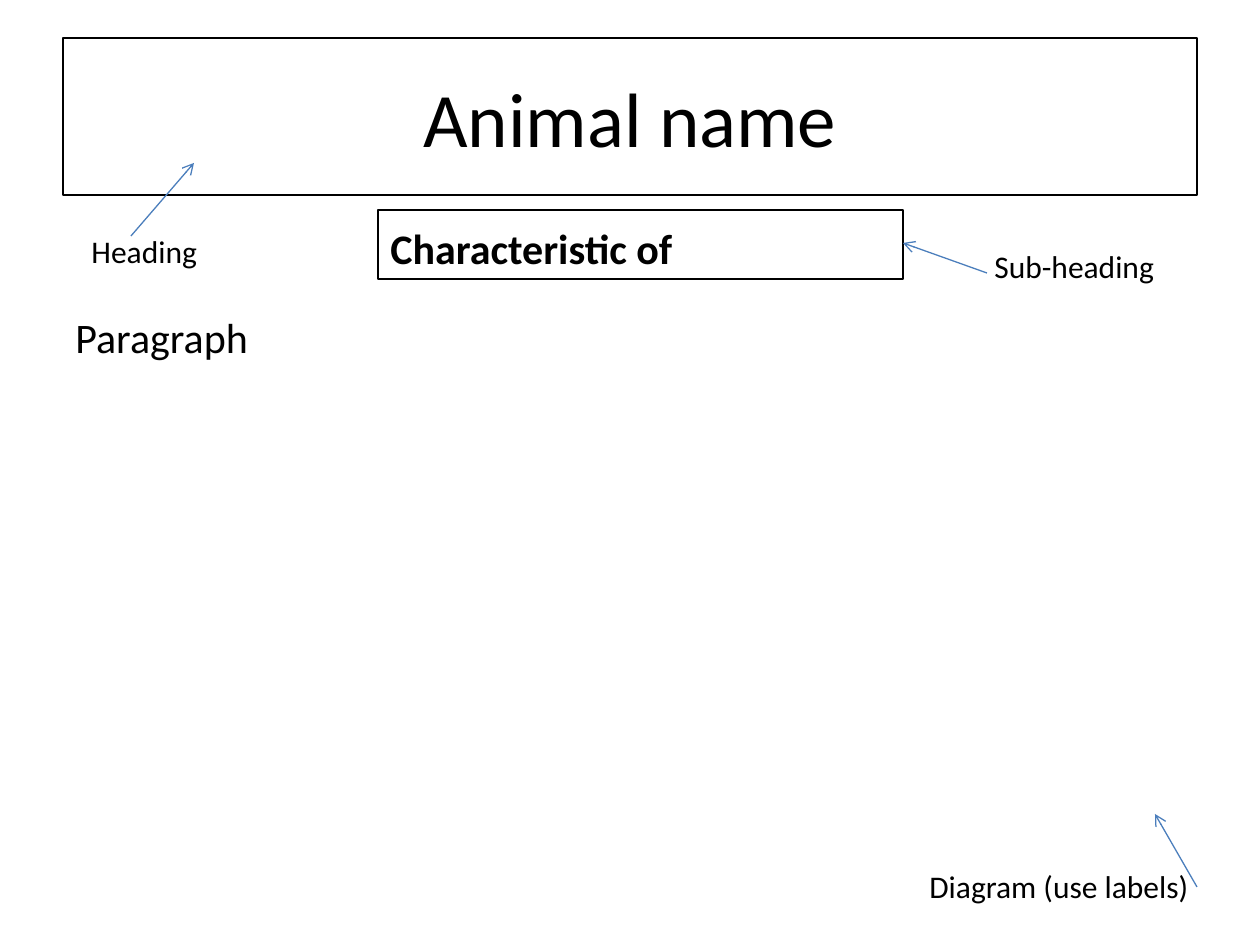
from lxml.etree import SubElement
from pptx import Presentation
from pptx.dml.color import RGBColor
from pptx.enum.shapes import MSO_CONNECTOR, MSO_SHAPE
from pptx.enum.text import MSO_ANCHOR as ANCHOR, MSO_AUTO_SIZE as FIT, PP_ALIGN as ALIGN
from pptx.oxml.ns import qn
from pptx.util import Emu, Pt

BLACK = RGBColor(0x00, 0x00, 0x00)
BLUE = RGBColor(0x4B, 0x7E, 0xBC)
FONT = "Calibri"
LINE_WIDTH = Pt(0.75)


def px(n):
    return Emu(round(n * 914400 / 126))


def write(sp, text, size=24, bold=False, align=ALIGN.LEFT, anchor=ANCHOR.TOP,
          before=0, wrap=True):
    tf = sp.text_frame
    tf.word_wrap = wrap
    tf.vertical_anchor = anchor
    p = tf.paragraphs[0]
    p.alignment = align
    p.space_before = Pt(before)
    r = p.add_run()
    r.text = text
    r.font.name = FONT
    r.font.size = Pt(size)
    r.font.bold = bold
    r.font.color.rgb = BLACK


def add_frame(s, box, text, **fmt):
    sp = s.shapes.add_shape(MSO_SHAPE.RECTANGLE, *map(px, box))
    sp.shadow.inherit = False
    sp.fill.background()
    sp.line.color.rgb = BLACK
    sp.line.width = LINE_WIDTH
    write(sp, text, **fmt)


def add_text(s, box, text, **fmt):
    sp = s.shapes.add_textbox(*map(px, box))
    write(sp, text, **fmt)
    return sp


def add_label(s, box, text, wrap=False):
    sp = add_text(s, box, text, size=18, wrap=wrap)
    sp.text_frame.auto_size = FIT.SHAPE_TO_FIT_TEXT


def add_arrow(s, start, end):
    cn = s.shapes.add_connector(MSO_CONNECTOR.STRAIGHT, *map(px, start + end))
    cn.line.color.rgb = BLUE
    cn.line.width = LINE_WIDTH
    SubElement(cn.line._get_or_add_ln(), qn("a:tailEnd"), type="arrow")
    SubElement(cn._element.spPr, qn("a:effectLst"))


def main():
    prs = Presentation()
    prs.slide_width, prs.slide_height = px(1260), px(945)
    s = prs.slides.add_slide(prs.slide_layouts[6])

    add_frame(s, (63, 38, 1134, 157), "Animal name", size=44,
              align=ALIGN.CENTER, anchor=ANCHOR.MIDDLE)
    add_frame(s, (378, 210, 525, 69), "Characteristic of", bold=True,
              anchor=ANCHOR.BOTTOM, before=5)
    add_text(s, (63, 305, 809, 571), "Paragraph", before=5)

    add_label(s, (79, 226, 158, 50), "Heading", wrap=True)
    add_arrow(s, (131, 236), (194, 163))
    add_label(s, (982, 241, 188, 50), "Sub-heading")
    add_arrow(s, (987, 273), (903, 243))
    add_label(s, (917, 861, 287, 50), "Diagram (use labels)")
    add_arrow(s, (1197, 887), (1155, 814))

    prs.save("out.pptx")


if __name__ == "__main__":
    main()
